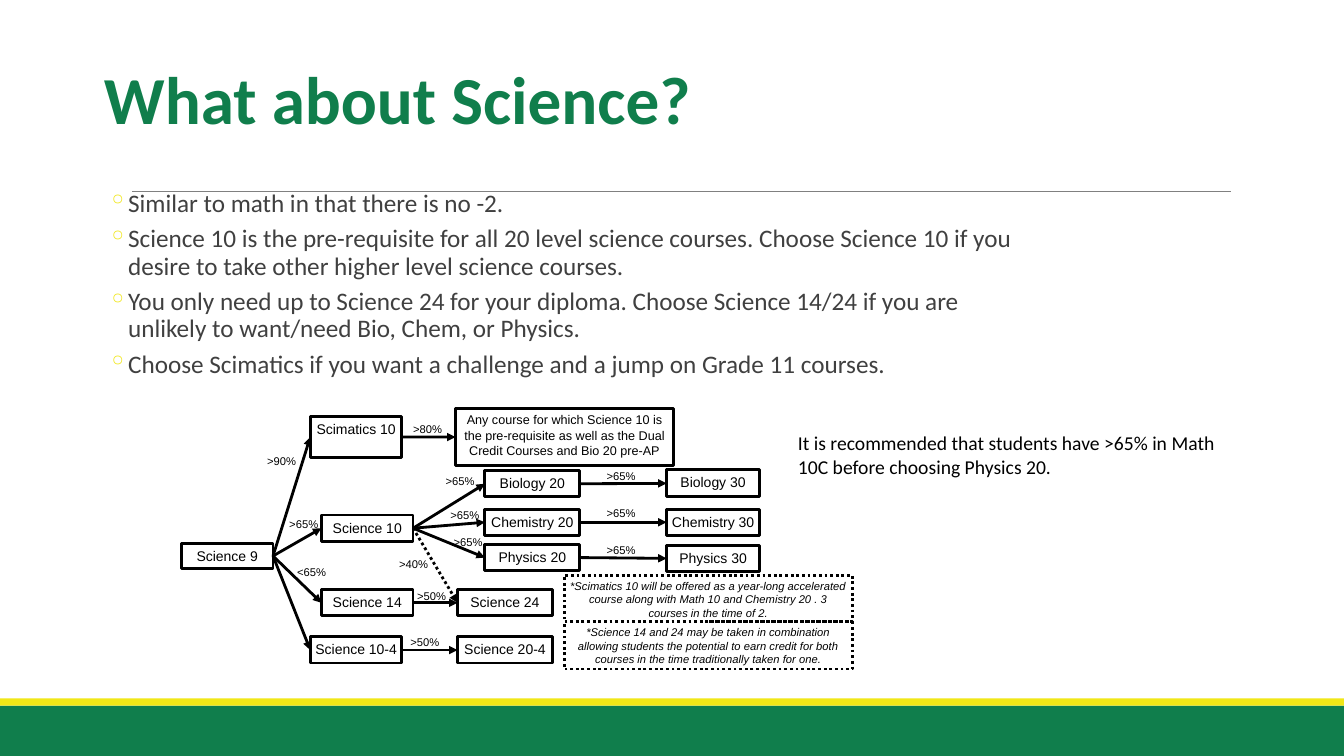
"""Build the science course pathway slide."""
from dataclasses import dataclass

from pptx import Presentation
from pptx.dml.color import RGBColor as Rgb
from pptx.enum.dml import MSO_LINE as Dash
from pptx.enum.shapes import MSO_CONNECTOR as Link, MSO_SHAPE as Kind
from pptx.enum.text import MSO_ANCHOR as Anchor, MSO_AUTO_SIZE as Fit, PP_ALIGN as Align
from pptx.oxml.ns import qn
from pptx.util import Cm, Pt

TITLE = "What about Science?"
POINTS = [
    "Similar to math in that there is no -2.",
    "Science 10 is the pre-requisite for all 20 level science courses. "
    "Choose Science 10 if you desire to take other higher level science courses.",
    "You only need up to Science 24 for your diploma. "
    "Choose Science 14/24 if you are unlikely to want/need Bio, Chem, or Physics.",
    "Choose Scimatics if you want a challenge and a jump on Grade 11 courses.",
]
ADVICE = "It is recommended that students have >65% in Math 10C before choosing Physics 20."
ANY = ("Any course for which Science 10 is the pre-requisite as well as "
       "the Dual Credit Courses and Bio 20 pre-AP")

# name: left, top, width, height in cm
COURSES = {
    "Science 9": (4.57, 13.69, 2.31, 0.64),
    "Scimatics 10": (7.82, 10.49, 2.31, 1.04),
    "Science 10": (8.1, 12.98, 2.31, 0.66),
    "Science 14": (8.1, 14.86, 2.31, 0.66),
    "Science 10-4": (7.82, 16.05, 2.31, 0.66),
    "Science 20-4": (11.53, 16.05, 2.39, 0.66),
    "Science 24": (11.53, 14.86, 2.39, 0.66),
    "Physics 20": (12.22, 13.72, 2.39, 0.66),
    "Chemistry 20": (12.22, 12.83, 2.39, 0.66),
    "Biology 20": (12.22, 11.86, 2.39, 0.66),
    ANY: (11.48, 10.29, 5.49, 1.45),
    "Physics 30": (16.8, 13.74, 2.34, 0.66),
    "Chemistry 30": (16.8, 12.83, 2.34, 0.66),
    "Biology 30": (16.8, 11.84, 2.34, 0.68),
}
NOTES = {
    "*Scimatics 10 will be offered as a year-long accelerated course along with "
    "Math 10 and Chemistry 20 . 3 courses in the time of 2.": (14.22, 14.5, 7.26, 1.17),
    "*Science 14 and 24 may be taken in combination allowing students the potential to "
    "earn credit for both courses in the time traditionally taken for one.":
        (14.22, 15.67, 7.26, 1.19),
}
# from, to, mark, left and top of the mark in cm
PATHS = [
    ("Science 9", "Scimatics 10", ">90%", 6.63, 11.35),
    ("Science 9", "Science 10", ">65%", 7.19, 12.93),
    ("Science 9", "Science 14", "<65%", 7.39, 14.15),
    ("Science 9", "Science 10-4", "", 0, 0),
    ("Scimatics 10", ANY, ">80%", 10.31, 10.54),
    ("Science 10", "Biology 20", ">65%", 11.13, 11.86),
    ("Science 10", "Chemistry 20", ">65%", 11.25, 12.7),
    ("Science 10", "Physics 20", ">65%", 11.33, 13.39),
    ("Science 10", "Science 24", ">40%", 9.96, 13.94),
    ("Science 14", "Science 24", ">50%", 10.41, 14.76),
    ("Science 10-4", "Science 20-4", ">50%", 10.24, 15.9),
    ("Biology 20", "Biology 30", ">65%", 15.19, 11.73),
    ("Chemistry 20", "Chemistry 30", ">65%", 15.19, 12.67),
    ("Physics 20", "Physics 30", ">65%", 15.19, 13.59),
]
DOTTED = ("Science 10", "Science 24")


@dataclass(frozen=True)
class Theme:
    """Colours, fonts and type sizes."""
    green: str = "107E4C"
    gold: str = "F1E717"
    grey: str = "808080"
    text: str = "404040"
    black: str = "000000"
    main: str = "Calibri"
    chart: str = "Arial"
    title: int = 48
    point: int = 18
    advice: int = 14
    course: int = 10
    long: int = 9
    small: int = 8


T = Theme()


def style(para, size, color=T.black, name=T.chart, bold=False, italic=False):
    """Set the font of a paragraph."""
    font = para.font
    font.size, font.name, font.bold, font.italic = Pt(size), name, bold, italic
    font.color.rgb = Rgb.from_string(color)


def setup(frame, side, top):
    """Wrap a text frame from its top, with the given insets in cm."""
    frame.word_wrap, frame.auto_size = True, Fit.NONE
    frame.vertical_anchor = Anchor.TOP
    frame.margin_left = frame.margin_right = Cm(side)
    frame.margin_top = frame.margin_bottom = Cm(top)
    return frame


def write(slide, box, text, size, name=T.chart, side=0.1, top=0.1):
    """Add a text box of one paragraph."""
    frame = setup(slide.shapes.add_textbox(*map(Cm, box)).text_frame, side, top)
    frame.text = text
    style(frame.paragraphs[0], size, name=name)


def band(slide, top, high, color):
    """Add a full-width band."""
    bar = slide.shapes.add_shape(Kind.RECTANGLE, 0, Cm(top), Cm(33.87), Cm(high))
    bar.shadow.inherit = False
    bar.fill.solid()
    bar.fill.fore_color.rgb = Rgb.from_string(color)
    bar.line.fill.background()


def frame_box(slide, box, text, size, note=False):
    """Add an outlined box, dotted and italic for a note."""
    shape = slide.shapes.add_shape(Kind.RECTANGLE, *map(Cm, box))
    shape.shadow.inherit = False
    shape.fill.background()
    shape.line.color.rgb = Rgb.from_string(T.black)
    shape.line.width = Pt(2)
    if note:
        shape.line.dash_style = Dash.ROUND_DOT
    frame = setup(shape.text_frame, 0.1, 0.1)
    frame.text = text
    para = frame.paragraphs[0]
    para.alignment = Align.CENTER
    style(para, size, italic=note)
    return shape


def stroke(slide, ends, color, width):
    """Add a plain straight line between ends in cm."""
    line = slide.shapes.add_connector(Link.STRAIGHT, *map(Cm, ends))
    line.line.color.rgb = Rgb.from_string(color)
    line.line.width = Pt(width)
    props = line._element.spPr
    props.append(props.makeelement(qn("a:effectLst"), {}))
    return line


def arrow(slide, start, end, dotted):
    """Join the right side of one box to the left side of another."""
    line = stroke(slide, (0, 0, 1, 1), T.black, 2)
    line.begin_connect(start, 3)
    line.end_connect(end, 1)
    if dotted:
        line.line.dash_style = Dash.ROUND_DOT
    edge = line.line._get_or_add_ln()
    edge.append(edge.makeelement(qn("a:tailEnd"), {"type": "triangle"}))


def bullet(para):
    """Give a paragraph a gold ring bullet and a hanging indent."""
    props = para._p.get_or_add_pPr()
    props.set("marL", str(Cm(1.07)))
    props.set("indent", str(Cm(-0.51)))
    tint = props.makeelement(qn("a:buClr"), {})
    tint.append(tint.makeelement(qn("a:srgbClr"), {"val": T.gold}))
    props.extend([tint, props.makeelement(qn("a:buChar"), {"char": "◦"})])
    para.line_spacing, para.space_before, para.space_after = 0.9, Pt(2), Pt(4)


def head(slide):
    """Place the title and the list of points."""
    title = slide.shapes.title
    title.left, title.top, title.width, title.height = map(Cm, (2.62, 1.55, 23.4, 2.4))
    frame = setup(title.text_frame, 0, 0.13)
    frame.text = TITLE
    para = frame.paragraphs[0]
    para.alignment, para.line_spacing = Align.LEFT, 0.9
    style(para, T.title, T.green, T.main, bold=True)
    box = slide.shapes.add_textbox(*map(Cm, (2.16, 4.8, 23.88, 5)))
    frame = setup(box.text_frame, 0, 0)
    frame.text = "\n".join(POINTS)
    for para in frame.paragraphs:
        bullet(para)
        style(para, T.point, T.text, T.main)


def main():
    """Build and save the slide."""
    deck = Presentation()
    deck.slide_width, deck.slide_height = Cm(33.87), Cm(19.05)
    slide = deck.slides.add_slide(deck.slide_layouts[5])
    band(slide, 17.78, 1.27, T.green)
    band(slide, 17.6, 0.18, T.gold)
    stroke(slide, (3.33, 4.83, 31.01, 4.83), T.grey, 0.5)
    head(slide)
    boxes = {name: frame_box(slide, box, name, T.long if name == ANY else T.course)
             for name, box in COURSES.items()}
    for start, end, mark, left, top in PATHS:
        arrow(slide, boxes[start], boxes[end], (start, end) == DOTTED)
        if mark:
            write(slide, (left, top, 1.02, 0.53), mark, T.small)
    for text, box in NOTES.items():
        frame_box(slide, box, text, T.small, note=True)
    write(slide, (19.86, 10.74, 11.4, 1.45), ADVICE, T.advice, T.main, 0.25, 0.13)
    deck.save("out.pptx")


if __name__ == "__main__":
    main()
